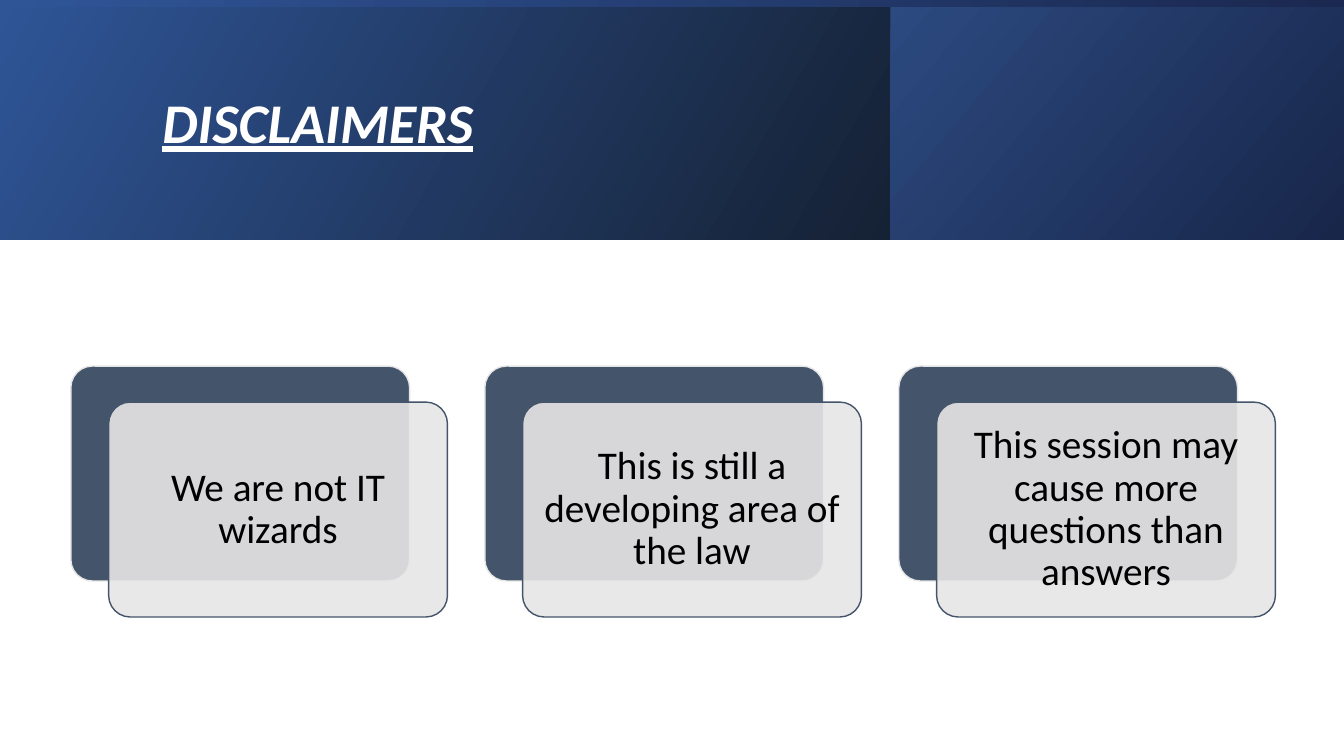
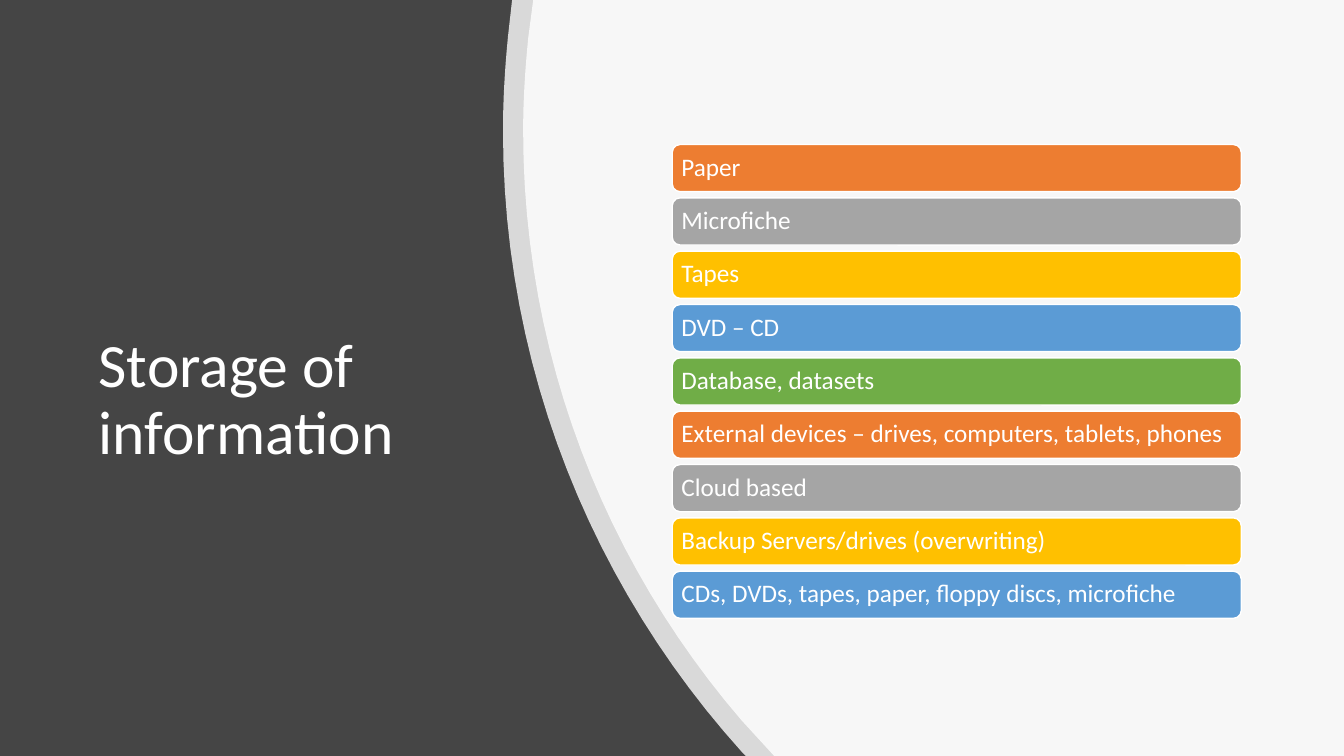
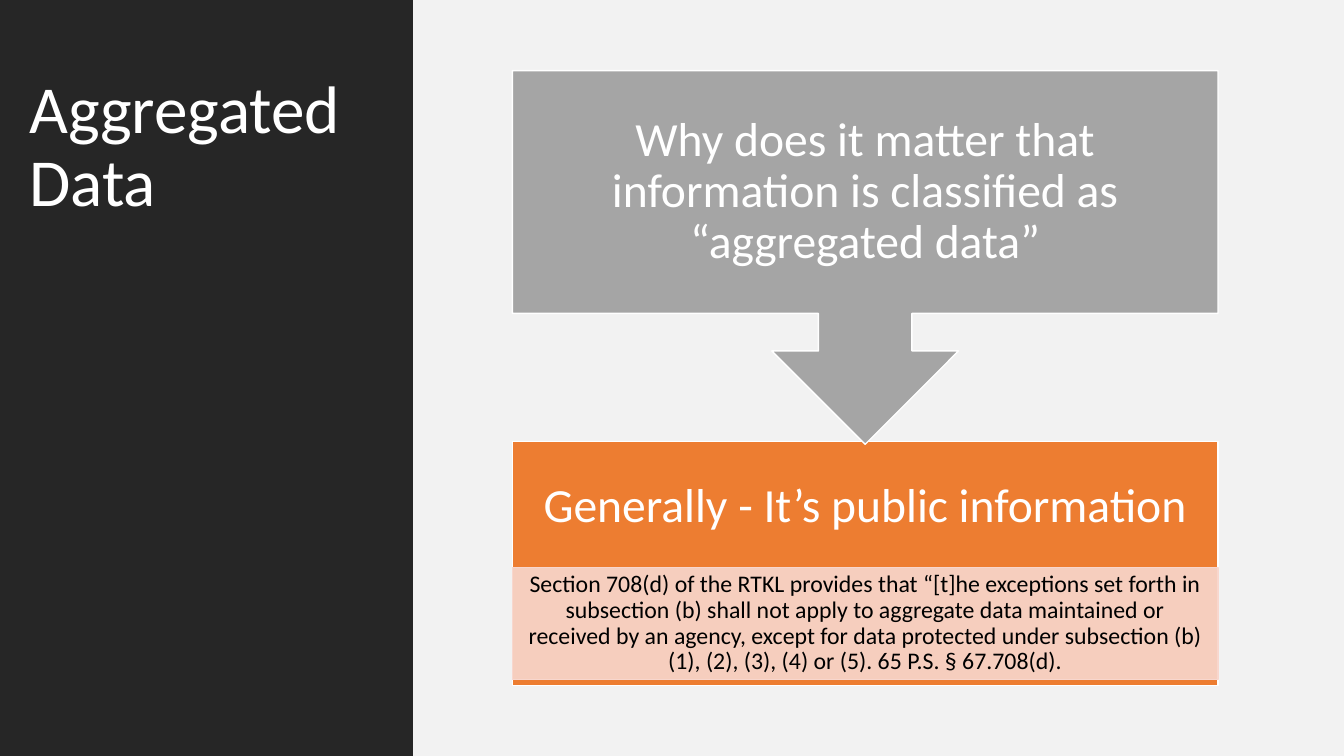
import lxml.etree
import pptx
import pptx.dml.color
import pptx.enum.shapes
import pptx.enum.text
import pptx.oxml.ns
import pptx.util

Pt = pptx.util.Pt
RGB = pptx.dml.color.RGBColor.from_string
SHAPE = pptx.enum.shapes.MSO_SHAPE
ALIGN = pptx.enum.text.PP_ALIGN
ANCHOR = pptx.enum.text.MSO_ANCHOR
qn = pptx.oxml.ns.qn


class Theme:
    font = "Calibri"
    line_spacing = 0.9
    line_width = 1
    title_insets = (7.2, 3.6, 7.2, 3.6)

    white, black = "FFFFFF", "000000"
    slate, pale = "44546A", "E7E6E6"
    orange, grey, gold, blue, green = "ED7D31", "A5A5A5", "FFC000", "5B9BD5", "70AD47"
    peach = "F8D7CE"
    charcoal, curve_edge, curve_panel = "454545", "D9D9D9", "F7F7F7"
    sidebar, backdrop = "262626", "F2F2F2"
    band_main = ("2F5597", "152134")
    band_side = ("2C4A80", "18264A")
    band_strip = ("2F5597", "1B2850")

    banner_title, title, large_title = 40, 44, 48
    card, bar, callout, detail = 28, 18, 34, 17


def add_block(s, kind, at, fill=None, line=None, opacity=100):
    """Add a preset shape, with at as left, top, width, height in points."""
    sp = s.shapes.add_shape(kind, *[Pt(v) for v in at])
    sp.shadow.inherit = False
    if fill:
        sp.fill.solid()
        sp.fill.fore_color.rgb = RGB(fill)
    if opacity < 100:
        for clr in sp.element.spPr.iter(qn("a:srgbClr")):
            lxml.etree.SubElement(clr, qn("a:alpha"), val=str(opacity * 1000))
    if line:
        sp.line.color.rgb = RGB(line)
        sp.line.width = Pt(Theme.line_width)
    else:
        sp.line.fill.background()
    return sp


def write(sp, text, size, color=Theme.white, align=ALIGN.LEFT,
          anchor=ANCHOR.MIDDLE, insets=Theme.title_insets):
    """Put one paragraph into a shape and return its run."""
    tf = sp.text_frame
    tf.word_wrap = True
    tf.vertical_anchor = anchor
    tf.margin_left, tf.margin_top, tf.margin_right, tf.margin_bottom = [
        Pt(v) for v in insets]
    p = tf.paragraphs[0]
    p.alignment = align
    p.line_spacing = Theme.line_spacing
    r = p.add_run()
    r.text = text
    r.font.name = Theme.font
    r.font.size = Pt(size)
    r.font.color.rgb = RGB(color)
    return r


prs = pptx.Presentation()
prs.slide_width, prs.slide_height = Pt(960), Pt(540)
blank = prs.slide_layouts[6]

# Disclaimers: gradient banner above three offset cards
s = prs.slides.add_slide(blank)
for at, colors, angle in [
    ((0, 0, 636, 171), Theme.band_main, 330),
    ((636, 0, 324, 171), Theme.band_side, 320),
    ((0, 0, 960, 5), Theme.band_strip, 0),
]:
    sp = add_block(s, SHAPE.RECTANGLE, at)
    sp.fill.gradient()
    sp.fill.gradient_angle = angle
    for stop, color in zip(sp.fill.gradient_stops, colors):
        stop.color.rgb = RGB(color)

sp = s.shapes.add_textbox(Pt(109), Pt(27.5), Pt(765), Pt(124))
r = write(sp, "DISCLAIMERS", Theme.banner_title)
r.font.bold = r.font.italic = r.font.underline = True

cards = [
    "We are not IT wizards",
    "This is still a developing area of the law",
    "This session may cause more questions than answers",
]
for i, text in enumerate(cards):
    left, top = 50.6 + i * 295.7, 261.5
    back = add_block(s, SHAPE.ROUNDED_RECTANGLE, (left, top, 242, 153.5),
                     Theme.slate, Theme.pale)
    front = add_block(s, SHAPE.ROUNDED_RECTANGLE, (left + 27, top + 25.7, 242, 153.5),
                      Theme.pale, Theme.slate, opacity=90)
    for sp in (back, front):
        sp.adjustments[0] = 0.1
    write(front, text, Theme.card, Theme.black, ALIGN.CENTER, insets=(8.6,) * 4)

# Storage of information: curved panel with a list of bars
s = prs.slides.add_slide(blank)
s.background.fill.solid()
s.background.fill.fore_color.rgb = RGB(Theme.charcoal)

# Each panel: bottom x, top x, and two Bezier curves that share a point
panels = [
    (Theme.curve_edge, 532.8, 365.8, [
        [(529.9, 537.1), (424.1, 419.8), (359.3, 264.2), (359.3, 93.6)],
        [(359.3, 93.6), (359.3, 70.6), (360.7, 48.2), (362.9, 25.9)]]),
    (Theme.curve_panel, 553, 380.9, [
        [(529.9, 514.8), (432.7, 401.8), (373.7, 254.9), (373.7, 93.6)],
        [(373.7, 93.6), (373.7, 71.3), (375.1, 49.7), (377.3, 27.4)]]),
]
steps = 24
for color, bottom_x, top_x, curves in panels:
    outline = [(960, 0), (960, 540), (bottom_x, 540)]
    for a, b, c, d in curves:
        for t in [n / steps for n in range(steps + 1)]:
            u = 1 - t
            outline.append([
                u**3 * a[k] + 3 * u**2 * t * b[k] + 3 * u * t**2 * c[k] + t**3 * d[k]
                for k in (0, 1)])
    builder = s.shapes.build_freeform(Pt(top_x), 0)
    builder.add_line_segments([(Pt(x), Pt(y)) for x, y in outline], close=True)
    sp = builder.convert_to_shape()
    sp.shadow.inherit = False
    sp.fill.solid()
    sp.fill.fore_color.rgb = RGB(color)
    sp.line.fill.background()

sp = s.shapes.add_textbox(Pt(63.4), Pt(110), Pt(282), Pt(353))
write(sp, "Storage of information", Theme.title)

bars = [
    "Paper",
    "Microfiche",
    "Tapes",
    "DVD – CD",
    "Database, datasets",
    "External devices – drives, computers, tablets, phones",
    "Cloud based",
    "Backup Servers/drives (overwriting)",
    "CDs, DVDs, tapes, paper, floppy discs, microfiche",
]
bar_colors = [Theme.orange, Theme.grey, Theme.gold, Theme.blue, Theme.green]
for i, text in enumerate(bars):
    sp = add_block(s, SHAPE.ROUNDED_RECTANGLE, (480.2, 103.2 + i * 38.1, 406.5, 33.7),
                   bar_colors[i % len(bar_colors)], Theme.white)
    write(sp, text, Theme.bar, insets=(4.9,) * 4)

# Aggregated Data: sidebar title, question callout and answer
s = prs.slides.add_slide(blank)
add_block(s, SHAPE.RECTANGLE, (294.5, 0, 665.5, 540), Theme.backdrop)
add_block(s, SHAPE.RECTANGLE, (0, 0, 295, 540), Theme.sidebar)
sp = s.shapes.add_textbox(Pt(13.9), Pt(50.4), Pt(250), Pt(439))
write(sp, "Aggregated Data", Theme.large_title, anchor=ANCHOR.TOP)

left, width = 366, 504
answer = add_block(s, SHAPE.RECTANGLE, (left, 315.5, width, 174), Theme.orange, Theme.white)
write(answer, "Generally - It’s public information", Theme.callout,
      align=ALIGN.CENTER, insets=(18.7, 18.7, 18.7, 99))

detail = add_block(s, SHAPE.RECTANGLE, (left, 405.5, width, 80),
                   Theme.peach, Theme.peach, opacity=90)
write(detail,
      "Section 708(d) of the RTKL provides that “[t]he exceptions set forth in "
      "subsection (b) shall not apply to aggregate data maintained or received by "
      "an agency, except for data protected under subsection (b)(1), (2), (3), (4) "
      "or (5). 65 P.S. § 67.708(d).",
      Theme.detail, Theme.black, ALIGN.CENTER, insets=(9.4, 1.4, 9.4, 1.4))

question = add_block(s, SHAPE.DOWN_ARROW_CALLOUT, (left, 50.4, width, 267),
                     Theme.grey, Theme.white)
write(question, "Why does it matter that information is classified as “aggregated data”",
      Theme.callout, align=ALIGN.CENTER, insets=(18.7,) * 4)

prs.save("out.pptx")
